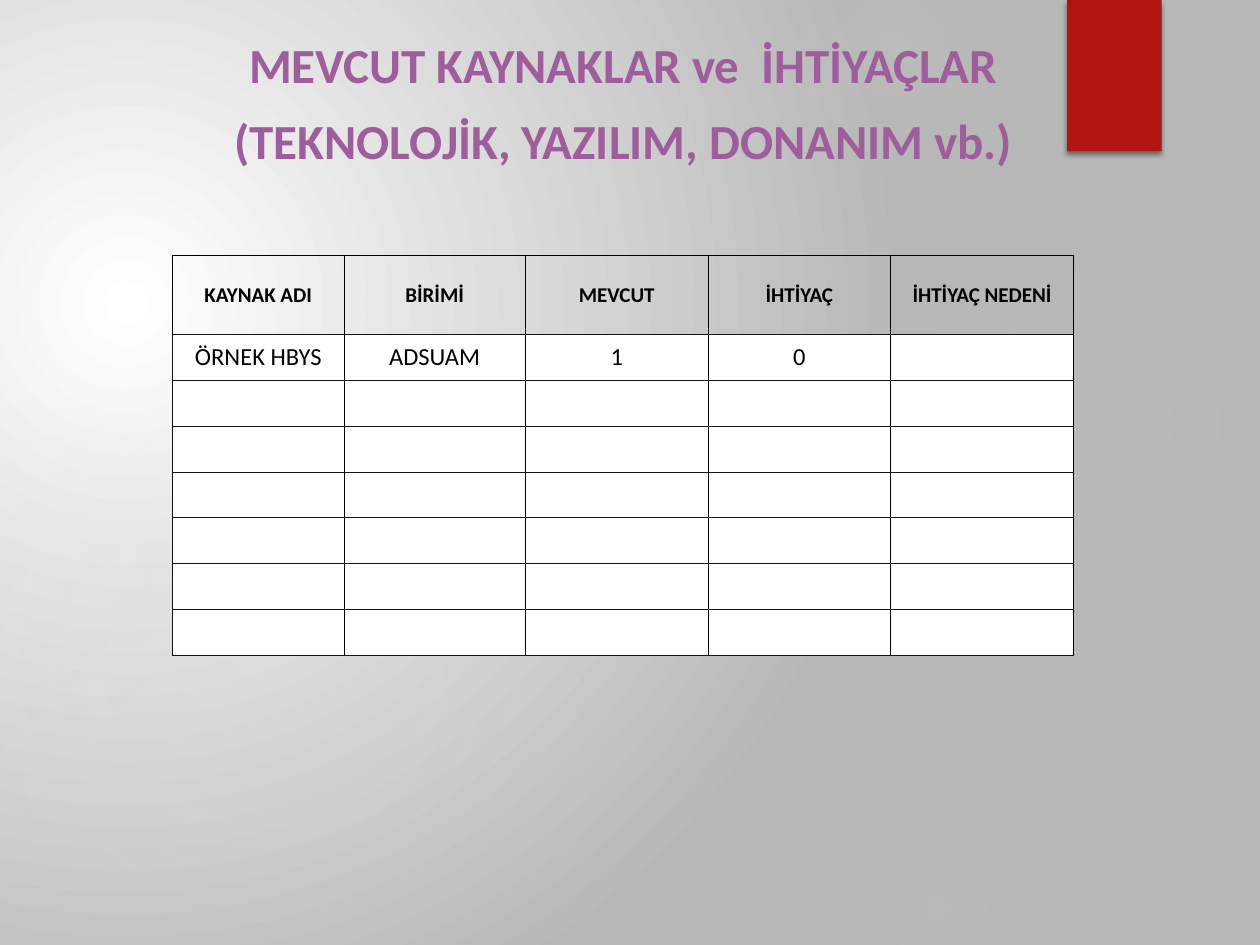
from typing import NamedTuple

from lxml.etree import SubElement
from pptx import Presentation
from pptx.dml.color import RGBColor
from pptx.enum.shapes import MSO_SHAPE as Preset
from pptx.enum.text import MSO_ANCHOR as Anchor, MSO_AUTO_SIZE as AutoSize, PP_ALIGN as Align
from pptx.oxml import parse_xml
from pptx.oxml.ns import nsdecls, qn
from pptx.util import Inches, Pt

WIDTH, HEIGHT = Inches(10), Inches(7.5)
FONT = "Calibri"
WHITE = RGBColor(0xFF, 0xFF, 0xFF)
BLACK = RGBColor(0x00, 0x00, 0x00)
SILVER = RGBColor(0xB7, 0xB7, 0xB7)
HALO = RGBColor(0xD9, 0xD9, 0xD9)
RED = RGBColor(0xB0, 0x15, 0x13)
PURPLE = RGBColor(0x9E, 0x5E, 0x9B)
INK = RGBColor(0x14, 0x13, 0x12)

TITLE = ["MEVCUT KAYNAKLAR ve  İHTİYAÇLAR", "(TEKNOLOJİK, YAZILIM, DONANIM vb.)"]
HEADINGS = ["KAYNAK ADI", "BİRİMİ", "MEVCUT", "İHTİYAÇ", "İHTİYAÇ NEDENİ"]
RESOURCES = [["ÖRNEK HBYS", "ADSUAM", "1", "0", ""]]
EMPTY_ROWS = 6
COLUMN_SHARES = [1.36, 1.44, 1.45, 1.45, 1.45]
ROW_SHARES = [0.62] + [0.36] * (len(RESOURCES) + EMPTY_ROWS)
HALOS = [
    (68.9, 24.4, 30.8, [(0, 7), (36, 6), (69, 0)]),
    (62.2, -6.67, 17.5, [(0, 14), (36, 7), (73, 0)]),
    (68.9, 88.93, 10.8, [(0, 9), (36, 5), (66, 0)]),
    (-1.7, 38.93, 45.8, [(0, 11), (36, 10), (75, 0)]),
    (-9.2, 42.27, 25.8, [(0, 8), (36, 8), (72, 0)]),
]


class Box(NamedTuple):
    """A rectangle on the slide, in EMU."""
    left: int
    top: int
    width: int
    height: int


def share(left, top, width, height):
    """Return the box covering the given percentages of the slide."""
    return Box(*(int(size * part / 100) for size, part in
                 zip((WIDTH, HEIGHT, WIDTH, HEIGHT), (left, top, width, height))))


def write(frame, lines, size, color, bold=False, anchor=Anchor.MIDDLE, spacing=None, after=None):
    """Fill a text frame with centred paragraphs."""
    frame.word_wrap = True
    frame.vertical_anchor = anchor
    frame.text = "\n".join(lines)
    for paragraph in frame.paragraphs:
        paragraph.alignment = Align.CENTER
        paragraph.line_spacing = spacing
        paragraph.space_after = after
        font = paragraph.font
        for run in paragraph.runs:
            font = run.font
            font.name, font.size, font.bold = FONT, Pt(size), bold
            font.color.rgb = color


def radial_fill(holder, stops, focus):
    """Replace the solid fill of a holder by a circular gradient."""
    solid = holder.find(qn("a:solidFill"))
    points = "".join(
        f'<a:gs pos="{place * 1000}"><a:srgbClr val="{color}">'
        f'<a:alpha val="{alpha * 1000}"/></a:srgbClr></a:gs>'
        for place, color, alpha in stops)
    sides = " ".join(f'{side}="{value * 1000}"' for side, value in zip("ltrb", focus))
    holder.replace(solid, parse_xml(
        f'<a:gradFill rotWithShape="1" {nsdecls("a")}><a:gsLst>{points}</a:gsLst>'
        f'<a:path path="circle"><a:fillToRect {sides}/></a:path></a:gradFill>'))


def plain_shape(slide, preset, box, color):
    """Add a borderless filled shape without a shadow."""
    shape = slide.shapes.add_shape(preset, *box)
    shape.shadow.inherit = False
    shape.fill.solid()
    shape.fill.fore_color.rgb = color
    shape.line.fill.background()
    return shape


def add_backdrop(slide):
    """Light the background and lay the faint halos over it."""
    slide.background.fill.solid()
    backdrop = slide.element.find(".//" + qn("p:bgPr"))
    radial_fill(backdrop, [(0, WHITE, 100), (100, SILVER, 100)], (45, 65, 125, 100))
    for left, top, diameter, fades in HALOS:
        box = share(left, top, diameter, diameter * WIDTH / HEIGHT)
        halo = plain_shape(slide, Preset.OVAL, box, HALO)
        radial_fill(halo.element.spPr, [(place, HALO, alpha) for place, alpha in fades], (50,) * 4)


def add_ribbon(slide, box):
    """Hang the red ribbon with its soft shadow."""
    ribbon = plain_shape(slide, Preset.RECTANGLE, box, RED)
    effects = ribbon.element.spPr.find(qn("a:effectLst"))
    shadow = SubElement(effects, qn("a:outerShdw"), blurRad=str(Pt(3)), dist=str(Pt(2)),
                        dir="5400000", rotWithShape="0")
    tint = SubElement(shadow, qn("a:srgbClr"), val=str(BLACK))
    SubElement(tint, qn("a:alpha"), val="45000")


def add_title(slide, box):
    """Place the two-line title in front of the backdrop."""
    title = slide.shapes.title
    title.left, title.top, title.width, title.height = box
    title.text_frame.auto_size = AutoSize.NONE
    write(title.text_frame, TITLE, 28, PURPLE, bold=True, anchor=Anchor.BOTTOM,
          spacing=1.1, after=Pt(6))
    slide.shapes.element.append(title.element)


def border(cell, **colors):
    """Draw half-point borders on the sides L, R, T and B of a cell."""
    properties = cell._tc.get_or_add_tcPr()
    for index, (side, color) in enumerate(colors.items()):
        properties.insert(index, parse_xml(
            f'<a:ln{side} w="{Pt(0.5)}" {nsdecls("a")}><a:solidFill>'
            f'<a:srgbClr val="{color}"/></a:solidFill></a:ln{side}>'))


def add_resource_table(slide, box):
    """Build the table of resources and needs."""
    rows = [HEADINGS] + RESOURCES + [[""] * len(HEADINGS)] * EMPTY_ROWS
    table = slide.shapes.add_table(len(rows), len(HEADINGS), *box).table
    table.first_row = table.horz_banding = False
    for column, part in zip(table.columns, COLUMN_SHARES):
        column.width = int(box.width * part / sum(COLUMN_SHARES))
    for row, part in zip(table.rows, ROW_SHARES):
        row.height = int(box.height * part / sum(ROW_SHARES))
    for r, texts in enumerate(rows):
        heading = r == 0
        for c, text in enumerate(texts):
            cell = table.cell(r, c)
            cell.margin_left = cell.margin_right = cell.margin_top = cell.margin_bottom = 0
            cell.vertical_anchor = Anchor.MIDDLE
            write_cell(cell, text, heading)
            border(cell, L=BLACK if c or heading else INK, R=BLACK,
                   T=BLACK if heading else INK, B=INK)


def write_cell(cell, text, heading):
    """Write and fill one heading or body cell."""
    write(cell.text_frame, [text], 12 if heading else 14, BLACK, bold=heading)
    cell.vertical_anchor = Anchor.MIDDLE
    if heading:
        cell.fill.background()
    else:
        cell.fill.solid()
        cell.fill.fore_color.rgb = WHITE


def main():
    """Build and save the slide."""
    deck = Presentation()
    deck.slide_width, deck.slide_height = WIDTH, HEIGHT
    slide = deck.slides.add_slide(deck.slide_layouts[5])
    add_backdrop(slide)
    add_ribbon(slide, share(84.7, 0, 7.5, 16))
    add_title(slide, share(17.2, 5.07, 64.5, 13.47))
    add_resource_table(slide, share(13.7, 27.07, 71.5, 42.27))
    deck.save("out.pptx")


if __name__ == "__main__":
    main()
